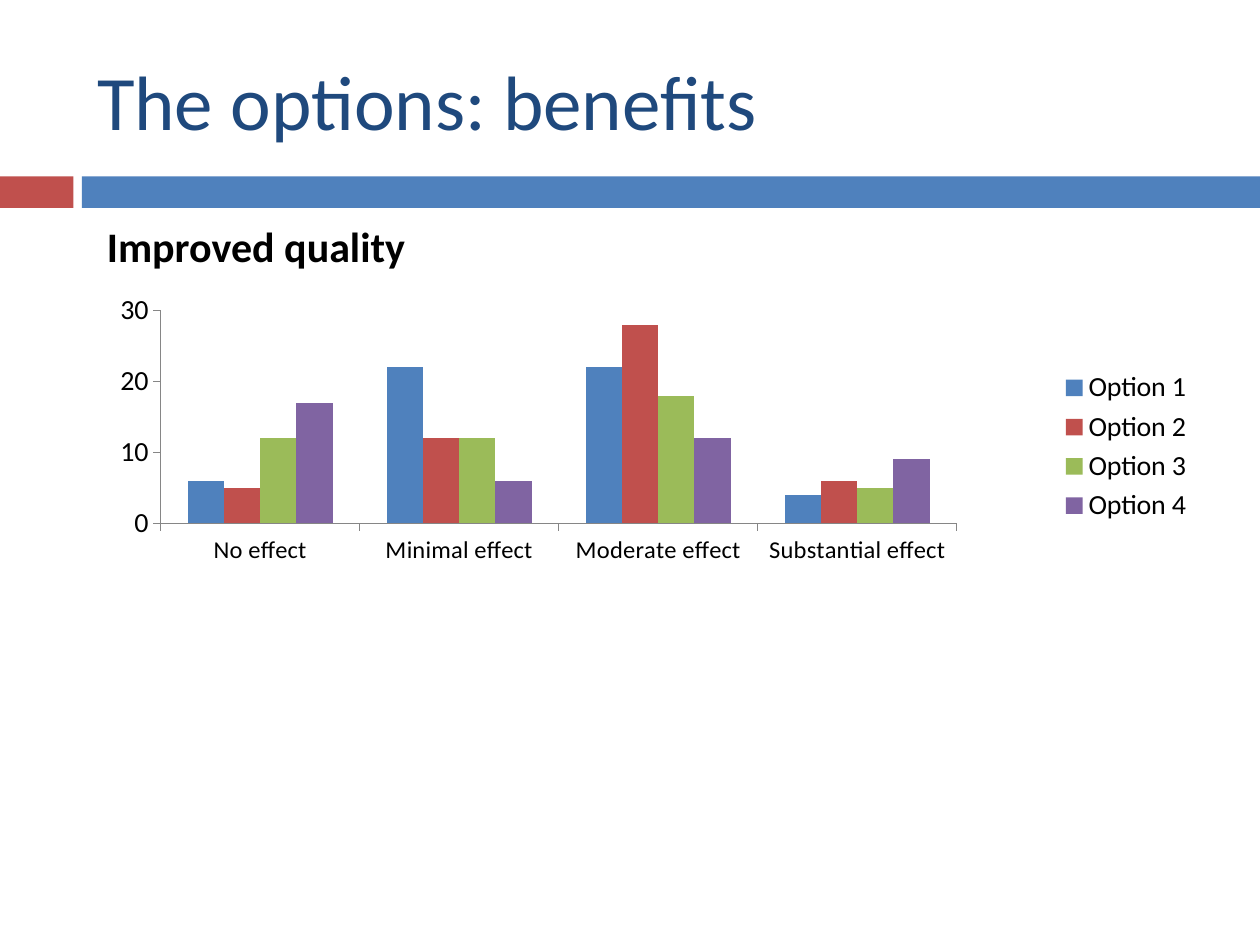
from dataclasses import dataclass

from lxml import etree
from pptx import Presentation
from pptx.chart.data import CategoryChartData
from pptx.dml.color import RGBColor
from pptx.enum.chart import XL_CHART_TYPE, XL_LEGEND_POSITION, XL_TICK_MARK
from pptx.enum.shapes import MSO_SHAPE
from pptx.enum.text import MSO_ANCHOR, PP_ALIGN
from pptx.oxml.ns import qn
from pptx.util import Pt

RECTANGLE = MSO_SHAPE.RECTANGLE
CLUSTERED = XL_CHART_TYPE.COLUMN_CLUSTERED
LEGEND_RIGHT = XL_LEGEND_POSITION.RIGHT
TICK_OUTSIDE = XL_TICK_MARK.OUTSIDE
MIDDLE, TOP = MSO_ANCHOR.MIDDLE, MSO_ANCHOR.TOP
LEFT = PP_ALIGN.LEFT

FONT = "Calibri"
COLORS = {
    "title": "1F497D",
    "text": "000000",
    "axis": "868686",
    "blue": "4F81BD",
    "red": "C0504D",
    "green": "9BBB59",
    "purple": "8064A2",
}


@dataclass
class Box:
    left: float
    top: float
    width: float
    height: float

    def lengths(self):
        return Pt(self.left), Pt(self.top), Pt(self.width), Pt(self.height)


@dataclass
class Band:
    box: Box
    color: str


@dataclass
class Option:
    name: str
    values: tuple
    color: str


BANDS = [
    Band(Box(0, 100.8, 42, 18), "red"),
    Band(Box(46.8, 100.8, 673.2, 18), "blue"),
]
CATEGORIES = ["No effect", "Minimal effect", "Moderate effect", "Substantial effect"]
OPTIONS = [
    Option("Option 1", (6, 22, 22, 4), "blue"),
    Option("Option 2", (5, 12, 28, 6), "red"),
    Option("Option 3", (12, 12, 18, 5), "green"),
    Option("Option 4", (17, 6, 12, 9), "purple"),
]
PLOT_LAYOUT = {
    "layoutTarget": "inner",
    "xMode": "edge",
    "yMode": "edge",
    "x": 0.068,
    "y": 0.043,
    "w": 0.71,
    "h": 0.714,
}


def color_of(name: str) -> RGBColor:
    return RGBColor.from_string(COLORS[name])


def format_font(font, size: float, color: str = "text", bold: bool = False) -> None:
    font.name = FONT
    font.size = Pt(size)
    font.bold = bold
    font.color.rgb = color_of(color)


def write_text(shape, text: str, *, size: float, color: str = "text",
               bold: bool = False, anchor=TOP) -> None:
    frame = shape.text_frame
    frame.word_wrap = True
    frame.vertical_anchor = anchor
    paragraph = frame.paragraphs[0]
    paragraph.alignment = LEFT
    run = paragraph.add_run()
    run.text = text
    format_font(run.font, size, color, bold)


def draw_band(slide, band: Band) -> None:
    shape = slide.shapes.add_shape(RECTANGLE, *band.box.lengths())
    shape.shadow.inherit = False
    shape.fill.solid()
    shape.fill.fore_color.rgb = color_of(band.color)
    shape.line.fill.background()


def place_plot(chart) -> None:
    plot_area = chart.plots[0]._element.getparent()
    for layout in plot_area.findall(qn("c:layout")):
        plot_area.remove(layout)
    layout = etree.Element(qn("c:layout"))
    manual = etree.SubElement(layout, qn("c:manualLayout"))
    for tag, value in PLOT_LAYOUT.items():
        etree.SubElement(manual, qn(f"c:{tag}")).set("val", str(value))
    plot_area.insert(0, layout)


def format_axis(axis, size: float) -> None:
    axis.has_major_gridlines = False
    axis.major_tick_mark = TICK_OUTSIDE
    axis.format.line.color.rgb = color_of("axis")
    axis.format.line.width = Pt(0.75)
    format_font(axis.tick_labels.font, size)


def draw_chart(slide, box: Box) -> None:
    data = CategoryChartData()
    data.categories = CATEGORIES
    for option in OPTIONS:
        data.add_series(option.name, option.values)
    chart = slide.shapes.add_chart(CLUSTERED, *box.lengths(), data).chart
    chart.has_title = False
    format_font(chart.font, 10)

    plot = chart.plots[0]
    plot.gap_width = 150
    plot.overlap = 0
    plot.vary_by_categories = False
    for series, option in zip(plot.series, OPTIONS):
        series.format.fill.solid()
        series.format.fill.fore_color.rgb = color_of(option.color)

    format_axis(chart.category_axis, 14)
    format_axis(chart.value_axis, 16)
    chart.value_axis.minimum_scale = 0
    chart.value_axis.maximum_scale = 30
    chart.value_axis.major_unit = 10

    chart.has_legend = True
    chart.legend.position = LEGEND_RIGHT
    chart.legend.include_in_layout = False
    format_font(chart.legend.font, 16)
    place_plot(chart)


def main() -> None:
    presentation = Presentation()
    presentation.slide_width, presentation.slide_height = Pt(720), Pt(540)
    slide = presentation.slides.add_slide(presentation.slide_layouts[5])

    for band in BANDS:
        draw_band(slide, band)

    title = slide.shapes.title
    title.left, title.top, title.width, title.height = Box(48.24, 18, 642.24, 77.76).lengths()
    write_text(title, "The options: benefits", size=44, color="title", anchor=MIDDLE)

    heading = slide.shapes.add_textbox(*Box(54, 122.4, 640.8, 36).lengths())
    write_text(heading, "Improved quality", size=24, bold=True)

    draw_chart(slide, Box(48.24, 167.76, 640.8, 172.8))
    presentation.save("out.pptx")


if __name__ == "__main__":
    main()
